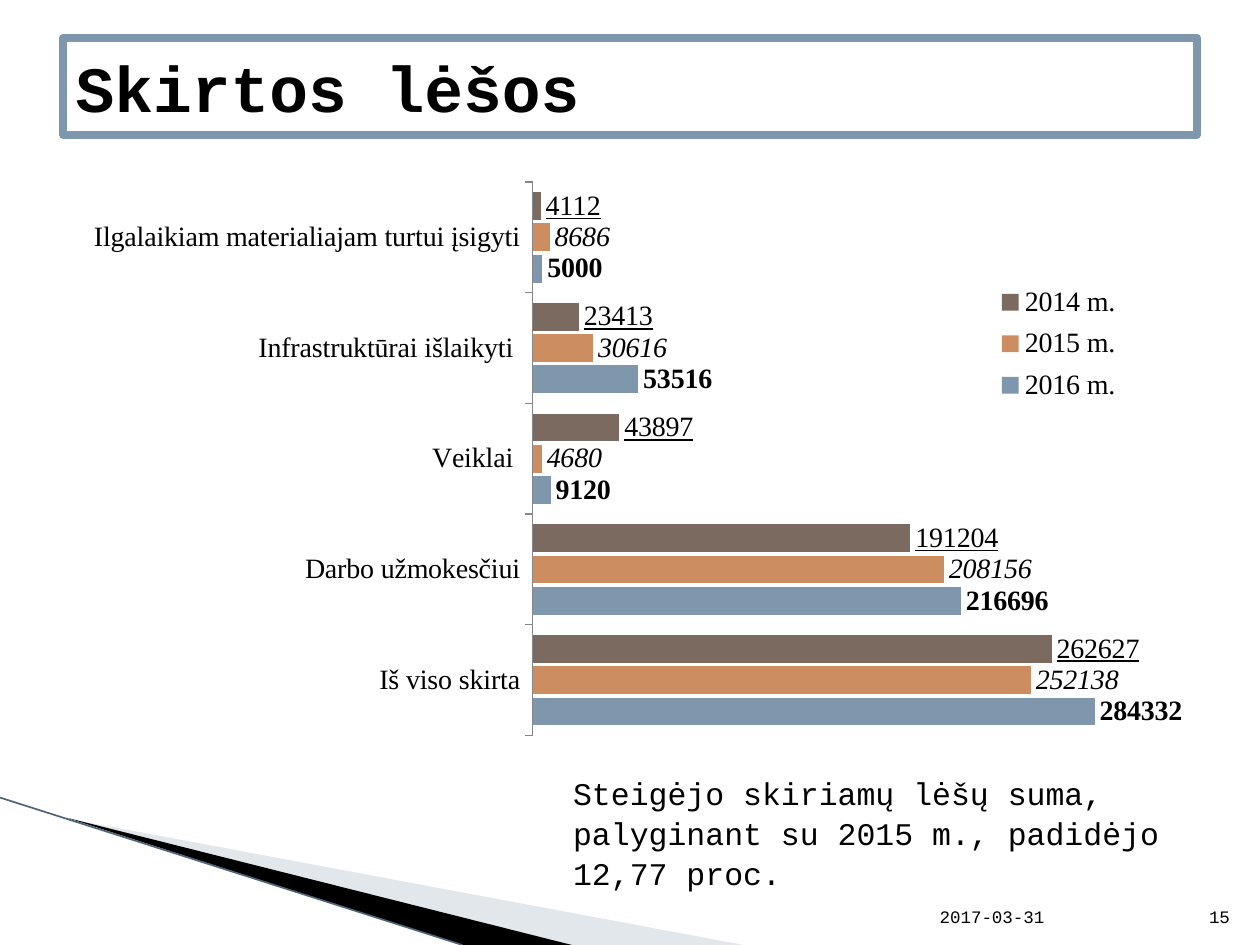
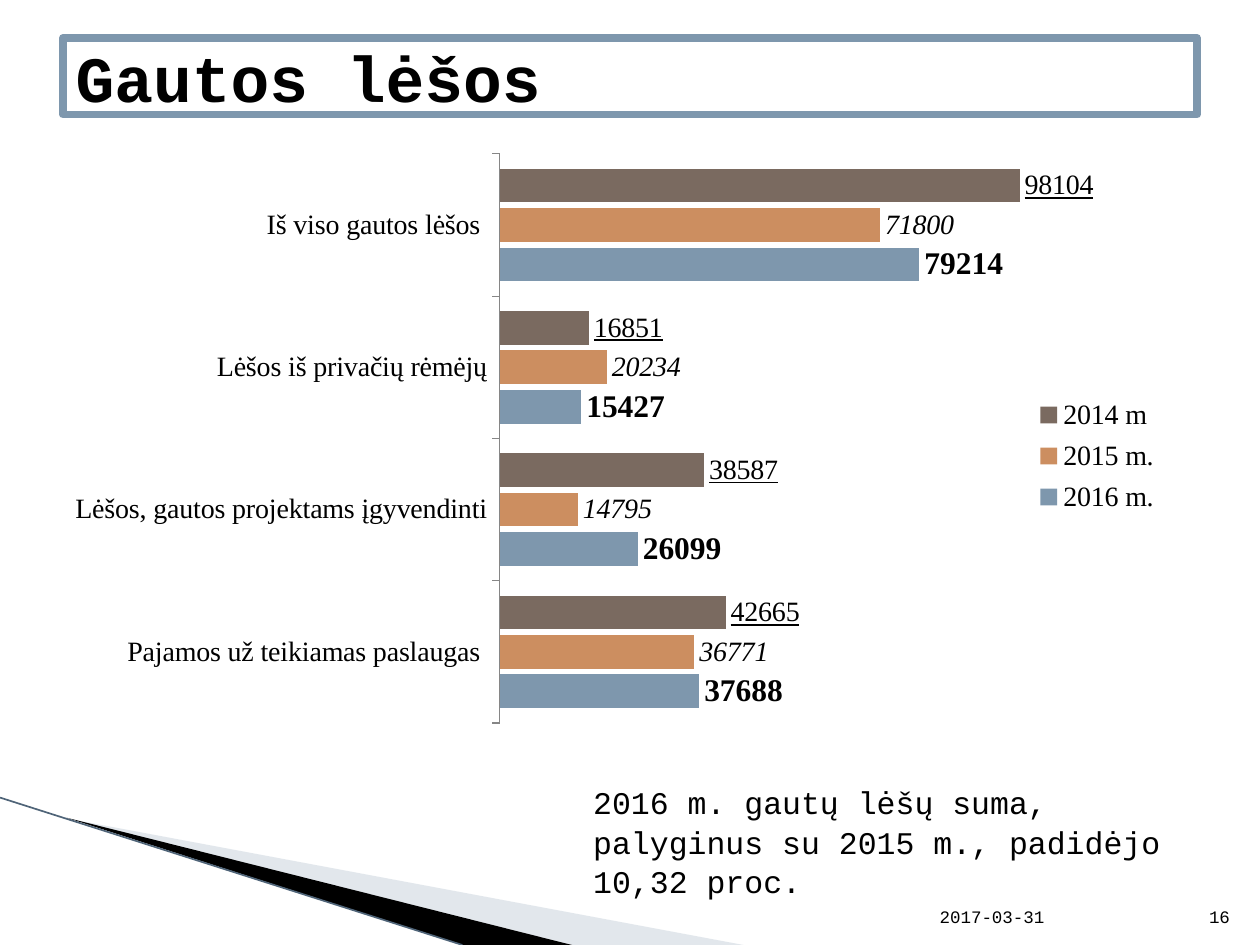
from lxml import etree
from pptx import Presentation
from pptx.chart.data import CategoryChartData
from pptx.dml.color import RGBColor
from pptx.enum.chart import (XL_CHART_TYPE, XL_LABEL_POSITION,
                             XL_LEGEND_POSITION, XL_TICK_MARK)
from pptx.enum.shapes import MSO_CONNECTOR
from pptx.enum.text import MSO_ANCHOR, MSO_AUTO_SIZE, PP_ALIGN
from pptx.oxml.ns import qn
from pptx.util import Inches, Pt

BAR_CLUSTERED = XL_CHART_TYPE.BAR_CLUSTERED
OUTSIDE_END = XL_LABEL_POSITION.OUTSIDE_END
LEGEND_RIGHT = XL_LEGEND_POSITION.RIGHT
TICK_OUT, TICK_NONE = XL_TICK_MARK.OUTSIDE, XL_TICK_MARK.NONE
STRAIGHT = MSO_CONNECTOR.STRAIGHT
TOP, MIDDLE, BOTTOM = MSO_ANCHOR.TOP, MSO_ANCHOR.MIDDLE, MSO_ANCHOR.BOTTOM
NO_AUTOFIT = MSO_AUTO_SIZE.NONE
LEFT, RIGHT = PP_ALIGN.LEFT, PP_ALIGN.RIGHT
TITLE_ONLY = 5

COLORS = {
    "text": "000000", "white": "FFFFFF", "blue": "7E97AD", "orange": "CC8E60",
    "brown": "7A6A60", "wedge": "B7C4D0", "edge": "4F6478", "axis": "868686",
}
MONO, SERIF = "Courier New", "Times New Roman"
DATE = "2017-03-31"

# Colour and label emphasis of the 2016, 2015 and 2014 series
SERIES_STYLES = [("blue", "bold"), ("orange", "italic"), ("brown", "underline")]

SLIDES = [
    {
        "title": "Skirtos lėšos", "title_height": 0.77, "number": "15",
        "chart_box": (0.51, 1.31, 9, 4.65),
        "plot": (0.413, 0.029, 0.523, 0.945),
        "legend": (0.81, 0.19, 0.14, 0.23),
        "gap": 73, "overlap": -13, "axis_max": 300000,
        "label_sizes": (16, 16, 16),
        "categories": ["Iš viso skirta", "Darbo užmokesčiui", "Veiklai ",
                       "Infrastruktūrai išlaikyti ",
                       "Ilgalaikiam materialiajam turtui įsigyti"],
        "series": [("2016 m.", (284332, 216696, 9120, 53516, 5000)),
                   ("2015 m.", (252138, 208156, 4680, 30616, 8686)),
                   ("2014 m. ", (262627, 191204, 43897, 23413, 4112))],
        "summary": "Steigėjo skiriamų lėšų suma, palyginant su 2015 m., "
                   "padidėjo 12,77 proc.",
        "summary_box": (4.45, 6.08, 5.04, 0.71),
    },
    {
        "title": "Gautos lėšos", "title_height": 0.61, "number": "16",
        "chart_box": (0.5, 1.07, 9, 4.88),
        "plot": (0.385, 0.031, 0.561, 0.926),
        "legend": (0.845, 0.415, 0.14, 0.215),
        "gap": 88, "overlap": -17, "axis_max": 120000,
        "label_sizes": (18, 16, 16),
        "categories": ["Pajamos už teikiamas paslaugas ",
                       "Lėšos, gautos projektams įgyvendinti",
                       "Lėšos iš privačių rėmėjų", "Iš viso gautos lėšos "],
        "series": [("2016 m.", (37688, 26099, 15427, 79214)),
                   ("2015 m. ", (36771, 14795, 20234, 71800)),
                   ("2014 m", (42665, 38587, 16851, 98104))],
        "summary": "2016 m. gautų lėšų suma, palyginus su 2015 m., "
                   "padidėjo 10,32 proc.",
        "summary_box": (4.61, 6.15, 4.8, 0.71),
    },
]


def rgb(name):
    return RGBColor.from_string(COLORS[name])


def set_font(font, name, size, bold=False):
    font.name, font.size, font.bold = name, Pt(size), bold
    font.color.rgb = rgb("text")


def add_wedge(slide, points, color, alpha=None):
    corners = [(Inches(x), Inches(y)) for x, y in points]
    builder = slide.shapes.build_freeform(*corners[0], scale=1.0)
    builder.add_line_segments(corners[1:], close=True)
    sp = builder.convert_to_shape()
    sp.shadow.inherit = False
    sp.fill.solid()
    sp.fill.fore_color.rgb = rgb(color)
    sp.line.fill.background()
    if alpha is not None:
        clr = sp.fill._xPr.find(".//" + qn("a:srgbClr"))
        etree.SubElement(clr, qn("a:alpha")).set("val", str(alpha * 1000))


def add_corner(slide):
    """Swoosh in the bottom left corner."""
    add_wedge(slide, [(0.55, 6.5), (5.9, 7.5), (4.54, 7.5)], "wedge", 40)
    add_wedge(slide, [(0.53, 6.49), (4.54, 7.5), (3.67, 7.5)], "text")
    edge = slide.shapes.add_connector(STRAIGHT, 0, Inches(6.33),
                                      Inches(3.67), Inches(7.5))
    edge.line.color.rgb = rgb("edge")
    edge.line.width = Pt(0.95)
    etree.SubElement(edge._element.spPr, qn("a:effectLst"))


def add_text(slide, text, box, size, anchor=TOP, align=LEFT, spacing=1.0):
    tf = slide.shapes.add_textbox(*map(Inches, box)).text_frame
    tf.word_wrap = True
    tf.vertical_anchor = anchor
    p = tf.paragraphs[0]
    p.text = text
    p.alignment = align
    p.line_spacing = spacing
    set_font(p.font, MONO, size)


def set_title(slide, text, height):
    title = slide.shapes.title
    title.left, title.top, title.width, title.height = map(
        Inches, (0.5, 0.3, 9, height))
    title.fill.solid()
    title.fill.fore_color.rgb = rgb("white")
    title.line.color.rgb = rgb("blue")
    title.line.width = Pt(4.33)
    tf = title.text_frame
    tf.text = text
    tf.word_wrap = True
    tf.auto_size = NO_AUTOFIT
    tf.vertical_anchor = MIDDLE
    p = tf.paragraphs[0]
    p.alignment = LEFT
    set_font(p.font, MONO, 36.9, bold=True)


def manual_layout(box, inner=False):
    """Chart layout element; box holds fractions of the chart area."""
    layout = etree.Element(qn("c:layout"))
    manual = etree.SubElement(layout, qn("c:manualLayout"))
    settings = [("layoutTarget", "inner")] if inner else []
    settings += [("xMode", "edge"), ("yMode", "edge"), *zip("xywh", box)]
    for tag, value in settings:
        etree.SubElement(manual, qn("c:" + tag)).set("val", str(value))
    return layout


def remove_layout(element):
    for old in element.findall(qn("c:layout")):
        element.remove(old)


def style_series(series, style, label_size):
    color, emphasis = style
    series.format.fill.solid()
    series.format.fill.fore_color.rgb = rgb(color)
    labels = series.data_labels
    labels.show_value = True
    labels.position = OUTSIDE_END
    set_font(labels.font, SERIF, label_size)
    setattr(labels.font, emphasis, True)


def add_funds_chart(slide, spec_):
    data = CategoryChartData()
    data.categories = spec_["categories"]
    for name, values in spec_["series"]:
        data.add_series(name, values)
    chart = slide.shapes.add_chart(
        BAR_CLUSTERED, *map(Inches, spec_["chart_box"]), data).chart
    chart.has_title = False
    set_font(chart.font, SERIF, 16)

    # Bars
    plot = chart.plots[0]
    plot.vary_by_categories = False
    plot.gap_width, plot.overlap = spec_["gap"], spec_["overlap"]
    for series, style, size in zip(plot.series, SERIES_STYLES,
                                   spec_["label_sizes"]):
        style_series(series, style, size)

    # Axes
    cat_axis, val_axis = chart.category_axis, chart.value_axis
    cat_axis.major_tick_mark, cat_axis.minor_tick_mark = TICK_OUT, TICK_NONE
    cat_axis.format.line.color.rgb = rgb("axis")
    val_axis.minimum_scale, val_axis.maximum_scale = 0, spec_["axis_max"]
    val_axis.has_major_gridlines = False
    val_axis.visible = False

    # Legend and plot placement
    chart.has_legend = True
    legend = chart.legend
    legend.position = LEGEND_RIGHT
    legend.include_in_layout = False
    set_font(legend.font, SERIF, 16)
    remove_layout(legend._element)
    legend._element.find(qn("c:legendPos")).addnext(
        manual_layout(spec_["legend"]))
    plot_area = chart._chartSpace.chart.plotArea
    remove_layout(plot_area)
    plot_area.insert(0, manual_layout(spec_["plot"], inner=True))


def add_footer(slide, number):
    add_text(slide, DATE, (7.36, 7.01, 2.1, 0.4), 10, BOTTOM)
    add_text(slide, number, (9.46, 7.01, 0.4, 0.4), 10, BOTTOM, RIGHT)


def main():
    prs = Presentation()
    prs.slide_width, prs.slide_height = Inches(10), Inches(7.5)
    for content in SLIDES:
        slide = prs.slides.add_slide(prs.slide_layouts[TITLE_ONLY])
        add_corner(slide)
        set_title(slide, content["title"], content["title_height"])
        add_funds_chart(slide, content)
        add_text(slide, content["summary"], content["summary_box"], 18,
                 spacing=1.05)
        add_footer(slide, content["number"])
    prs.save("out.pptx")


if __name__ == "__main__":
    main()
